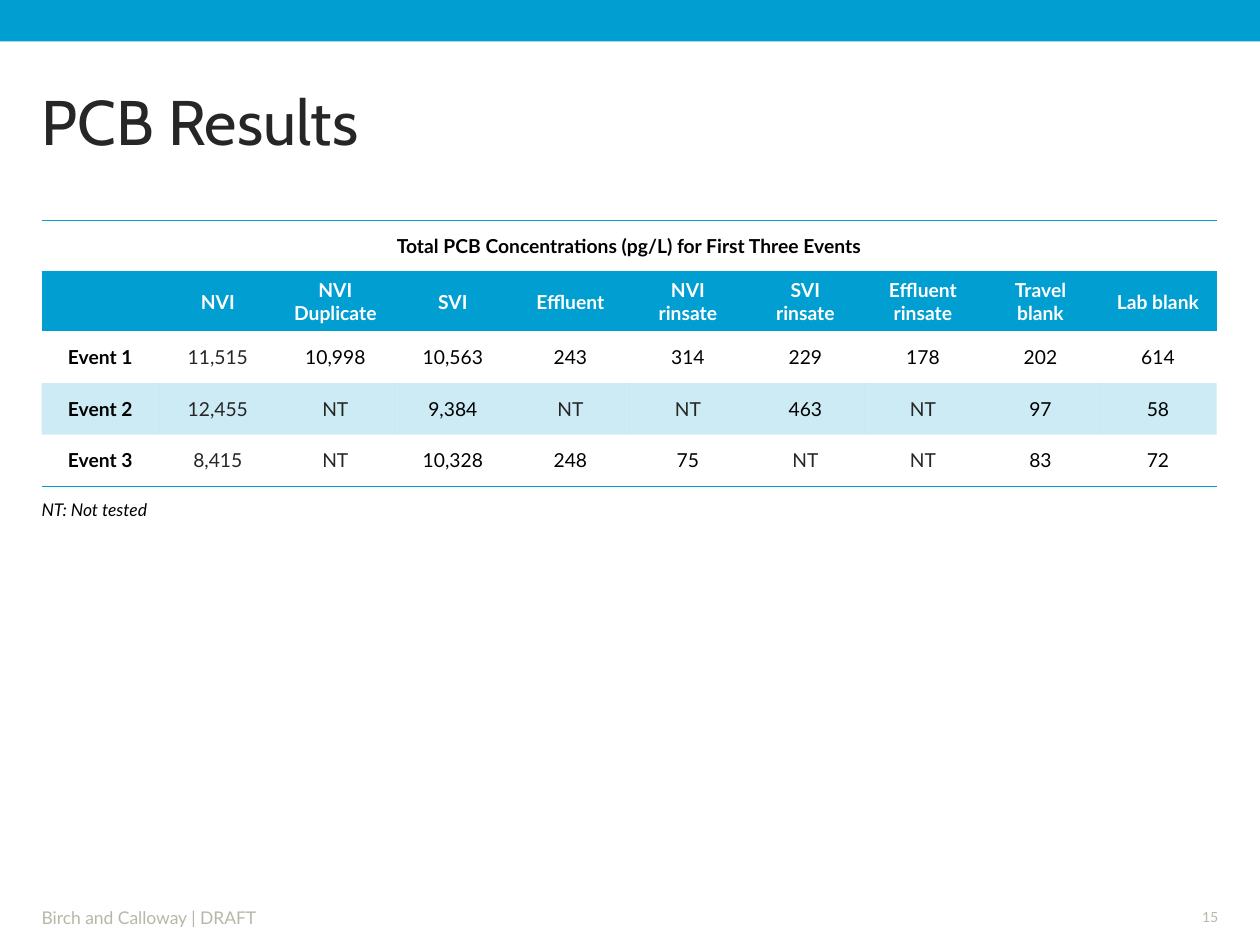
from lxml import etree
from pptx import Presentation
from pptx.dml.color import RGBColor
from pptx.enum import shapes, text
from pptx.oxml import ns
from pptx.util import Inches, Pt

# Content
TITLE = "PCB Results"
CAPTION = "Total PCB Concentrations (pg/L) for First Three Events"
HEAD = ["", "NVI", "NVI Duplicate", "SVI", "Effluent", "NVI rinsate",
        "SVI rinsate", "Effluent rinsate", "Travel blank", "Lab blank"]
ROWS = [
    ["Event 1", "11,515", "10,998", "10,563", "243", "314", "229", "178", "202", "614"],
    ["Event 2", "12,455", "NT", "9,384", "NT", "NT", "463", "NT", "97", "58"],
    ["Event 3", "8,415", "NT", "10,328", "248", "75", "NT", "NT", "83", "72"],
]
NOTE = "NT: Not tested"
FOOTER = "Birch and Calloway | DRAFT"
PAGE = "15"

# Look
BLUE = RGBColor(0x00, 0x9E, 0xD1)
DARK = RGBColor(0x26, 0x26, 0x26)
BLACK = RGBColor(0, 0, 0)
WHITE = RGBColor(255, 255, 255)
GRAY = RGBColor(0xB7, 0xB7, 0xA9)
LEFT, WIDE, ROW_H = 0.33, 9.33, 0.41
NO_STYLE = "{2D5ABB26-0587-4C30-8999-92F81FD0307C}"
ALIGN, ANCHOR = text.PP_ALIGN, text.MSO_ANCHOR


def write(frame, words, size=11, color=BLACK, font="Lato", bold=False,
          italic=False, align=ALIGN.LEFT):
    para = frame.paragraphs[0]
    para.alignment = align
    run = para.add_run()
    run.text = words
    face = run.font
    face.name, face.size, face.bold, face.italic = font, Pt(size), bold, italic
    face.color.rgb = color
    return para


def set_frame(frame, right=0, pad=0.05, anchor=ANCHOR.MIDDLE, wrap=True):
    frame.margin_left, frame.margin_right = 0, Inches(right)
    frame.margin_top = frame.margin_bottom = Inches(pad)
    frame.vertical_anchor, frame.word_wrap = anchor, wrap
    frame.auto_size = text.MSO_AUTO_SIZE.NONE


def add_text(box, words, pad=0.05, anchor=ANCHOR.MIDDLE, wrap=True, **style):
    frame = slide.shapes.add_textbox(*map(Inches, box)).text_frame
    set_frame(frame, pad=pad, anchor=anchor, wrap=wrap)
    write(frame, words, **style)
    return frame


def add_edges(cell, *sides):
    props = cell._tc.get_or_add_tcPr()
    for spot, side in enumerate(sides):
        line = etree.Element(ns.qn("a:ln" + side), w=str(Pt(1)))
        fill = etree.SubElement(line, ns.qn("a:solidFill"))
        etree.SubElement(fill, ns.qn("a:srgbClr"), val=str(BLUE))
        props.insert(spot, line)


def paint(cell, color=None, alpha=None):
    if color is None:
        cell.fill.background()
        return
    cell.fill.solid()
    cell.fill.fore_color.rgb = color
    if alpha:
        tint = cell._tc.tcPr.find(".//" + ns.qn("a:srgbClr"))
        etree.SubElement(tint, ns.qn("a:alpha"), val=str(alpha * 1000))


deck = Presentation()
deck.slide_width, deck.slide_height = Inches(10), Inches(7.5)
slide = deck.slides.add_slide(deck.slide_layouts[5])

# Top bar
bar = slide.shapes.add_shape(shapes.MSO_SHAPE.RECTANGLE, 0, 0, Inches(10), Inches(0.33))
bar.shadow.inherit = False
bar.fill.solid()
bar.fill.fore_color.rgb = BLUE
bar.line.fill.background()

# Title
title = slide.shapes.title
title.left, title.top, title.width, title.height = map(Inches, (LEFT, 0.5, WIDE, 1))
set_frame(title.text_frame, right=0.1)
write(title.text_frame, TITLE, size=36, color=DARK, font="Cabin").line_spacing = 0.85

# Footer and page number
add_text((LEFT, 7.17, 8.83, 0.23), FOOTER, size=10, color=GRAY)
add_text((9.25, 7.15, 0.42, 0.25), PAGE, size=8, color=GRAY, align=ALIGN.RIGHT)

# Results table
grid = [[CAPTION] + [""] * (len(HEAD) - 1), HEAD] + ROWS
last = len(grid) - 1
table = slide.shapes.add_table(
    len(grid), len(HEAD), Inches(LEFT), Inches(1.75),
    Inches(WIDE), Inches(ROW_H * len(grid))).table
table.first_row = table.horz_banding = False
table._tbl.tblPr.find(ns.qn("a:tableStyleId")).text = NO_STYLE
table.cell(0, 0).merge(table.cell(0, len(HEAD) - 1))

for r, row in enumerate(grid):
    for c, words in enumerate(row):
        cell = table.cell(r, c)
        cell.vertical_anchor = ANCHOR.MIDDLE
        if r == 1:
            paint(cell, BLUE)
        elif r == 3:
            paint(cell, BLUE, alpha=20)
        else:
            paint(cell)
        if r == 0:
            add_edges(cell, "T", "B")
        elif r == last:
            add_edges(cell, "B")
        if words:
            soft = r > 1 and (c == 1 or words == "NT")
            color = WHITE if r == 1 else DARK if soft else BLACK
            write(cell.text_frame, words, color=color, bold=r < 2 or c == 0,
                  align=ALIGN.CENTER)

# Note below the table
note = add_text((LEFT, 3.96, 0.85, 0.17), NOTE, pad=0, anchor=ANCHOR.TOP,
                wrap=False, size=10, italic=True)
note.auto_size = text.MSO_AUTO_SIZE.SHAPE_TO_FIT_TEXT

deck.save("out.pptx")
